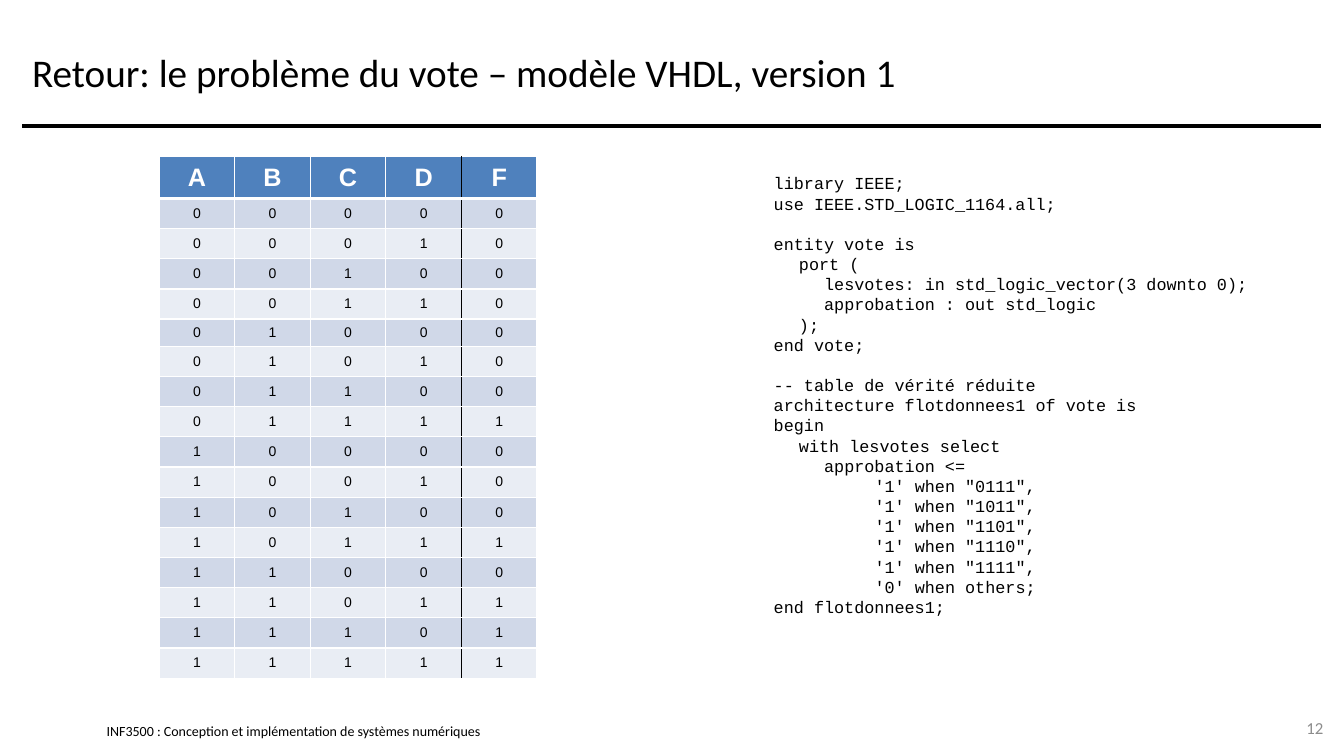
from dataclasses import dataclass
from itertools import product

from lxml import etree
from pptx import Presentation
from pptx.dml.color import RGBColor
from pptx.enum.shapes import MSO_CONNECTOR
from pptx.enum.text import MSO_ANCHOR, PP_ALIGN
from pptx.oxml.ns import qn
from pptx.util import Cm, Pt

STRAIGHT = MSO_CONNECTOR.STRAIGHT
TOP, MIDDLE = MSO_ANCHOR.TOP, MSO_ANCHOR.MIDDLE
LEFT, CENTER, RIGHT = PP_ALIGN.LEFT, PP_ALIGN.CENTER, PP_ALIGN.RIGHT

COLORS = {
    "black": "000000",
    "white": "FFFFFF",
    "grey": "8C8C8C",
    "header": "4F81BD",
    "odd_row": "D0D8E8",
    "even_row": "E9EDF4",
}
INPUTS = "ABCD"
OUTPUT = "F"
VOTES_NEEDED = 3
SHORT_ROW = 5
CODE_PITCH = Pt(14.4)
TAB_STOPS = (Cm(0.635), Cm(1.27))


@dataclass
class Style:
    font: str
    size: float
    color: str = "black"
    bold: bool = False


@dataclass
class Label:
    text: str
    left: float
    top: float
    width: float
    height: float
    style: Style
    align: PP_ALIGN = LEFT
    inset: bool = True


@dataclass
class CodeLine:
    text: str
    depth: int = 0
    gap_before: bool = False


LABELS = [
    Label("INF3500 : Conception et implémentation de systèmes numériques",
          2.69, 18.21, 12.98, 0.43, Style("Calibri", 10), inset=False),
    Label("Retour: le problème du vote – modèle VHDL, version 1",
          0.56, 0.43, 32.74, 2.74, Style("Calibri", 28)),
    Label("12", 31.9, 17.83, 1.7, 1.02, Style("Calibri", 12, "grey"), RIGHT),
]

CODE = [
    CodeLine("library IEEE;"),
    CodeLine("use IEEE.STD_LOGIC_1164.all;"),
    CodeLine("entity vote is", gap_before=True),
    CodeLine("port (", 1),
    CodeLine("lesvotes: in std_logic_vector(3 downto 0);", 2),
    CodeLine("approbation : out std_logic", 2),
    CodeLine(");", 1),
    CodeLine("end vote;"),
    CodeLine("-- table de vérité réduite", gap_before=True),
    CodeLine("architecture flotdonnees1 of vote is"),
    CodeLine("begin"),
    CodeLine("with lesvotes select", 1),
    CodeLine("approbation <=", 2),
    CodeLine("'1' when \"0111\",", 3),
    CodeLine("'1' when \"1011\",", 3),
    CodeLine("'1' when \"1101\",", 3),
    CodeLine("'1' when \"1110\",", 3),
    CodeLine("'1' when \"1111\",", 3),
    CodeLine("'0' when others;", 3),
    CodeLine("end flotdonnees1;"),
]


def rgb(name: str) -> RGBColor:
    return RGBColor.from_string(COLORS[name])


def add_span(para, text: str, style: Style) -> None:
    span = para.add_run()
    span.text = text
    span.font.name = style.font
    span.font.size = Pt(style.size)
    span.font.bold = style.bold
    span.font.color.rgb = rgb(style.color)


def add_label(page, label: Label) -> None:
    box = page.shapes.add_textbox(Cm(label.left), Cm(label.top),
                                  Cm(label.width), Cm(label.height))
    frame = box.text_frame
    frame.word_wrap = True
    frame.vertical_anchor = MIDDLE
    if not label.inset:
        frame.margin_left = frame.margin_right = 0
        frame.margin_top = frame.margin_bottom = 0
    para = frame.paragraphs[0]
    para.alignment = label.align
    add_span(para, label.text, label.style)


def add_title_rule(page) -> None:
    rule = page.shapes.add_connector(STRAIGHT, Cm(0.56), Cm(3.18), Cm(33.3), Cm(3.18))
    rule.line.width = Pt(3)
    rule.line.color.rgb = rgb("black")
    etree.SubElement(rule.element.spPr, qn("a:effectLst"))


def add_border(cell, side: str, color: str, width: float) -> None:
    """Draw one cell side (L, R, T or B); call before the cell is filled."""
    border = etree.SubElement(cell._tc.get_or_add_tcPr(), qn(f"a:ln{side}"),
                              w=str(Pt(width)))
    fill = etree.SubElement(border, qn("a:solidFill"))
    etree.SubElement(fill, qn("a:srgbClr"), val=COLORS[color])


def fill_cell(cell, text: str, row: int, column: int) -> None:
    is_header = row == 0
    divider = len(INPUTS)
    add_border(cell, "L", "black" if column == divider else "white", 1)
    add_border(cell, "R", "black" if column == divider - 1 else "white", 1)
    add_border(cell, "T", "white", 3 if row == 1 else 1)
    add_border(cell, "B", "white", 3 if is_header else 1)
    cell.fill.solid()
    band = "odd_row" if row % 2 else "even_row"
    cell.fill.fore_color.rgb = rgb("header" if is_header else band)
    cell.vertical_anchor = MIDDLE
    para = cell.text_frame.paragraphs[0]
    para.alignment = CENTER
    style = Style("Arial", 18, "white", True) if is_header else Style("Arial", 10)
    add_span(para, text, style)


def add_truth_table(page) -> None:
    rows = [[*INPUTS, OUTPUT]]
    for votes in product((0, 1), repeat=len(INPUTS)):
        approved = int(sum(votes) >= VOTES_NEEDED)
        rows.append([str(value) for value in (*votes, approved)])
    table = page.shapes.add_table(len(rows), len(rows[0]), Cm(4.01), Cm(3.94),
                                  Cm(9.53), Cm(13.16)).table
    for column in table.columns:
        column.width = Cm(1.905)
    for row, values in enumerate(rows):
        table.rows[row].height = Cm({0: 1.06, SHORT_ROW: 0.69}.get(row, 0.76))
        for column, text in enumerate(values):
            fill_cell(table.cell(row, column), text, row, column)


def add_code(page) -> None:
    box = page.shapes.add_textbox(Cm(19.25), Cm(4.24), Cm(12.78), Cm(12.07))
    frame = box.text_frame
    frame.word_wrap = True
    frame.vertical_anchor = TOP
    for index, line in enumerate(CODE):
        para = frame.add_paragraph() if index else frame.paragraphs[0]
        tabs = etree.SubElement(para._p.get_or_add_pPr(), qn("a:tabLst"))
        for stop in TAB_STOPS:
            etree.SubElement(tabs, qn("a:tab"), pos=str(stop), algn="l")
        para.line_spacing = CODE_PITCH
        if line.gap_before:
            para.space_before = CODE_PITCH
        add_span(para, "\t" * line.depth + line.text, Style("Courier New", 12))


def main() -> None:
    deck = Presentation()
    deck.slide_width, deck.slide_height = Cm(33.87), Cm(19.05)
    page = deck.slides.add_slide(deck.slide_layouts[6])
    add_title_rule(page)
    add_truth_table(page)
    for label in LABELS:
        add_label(page, label)
    add_code(page)
    deck.save("out.pptx")


if __name__ == "__main__":
    main()
